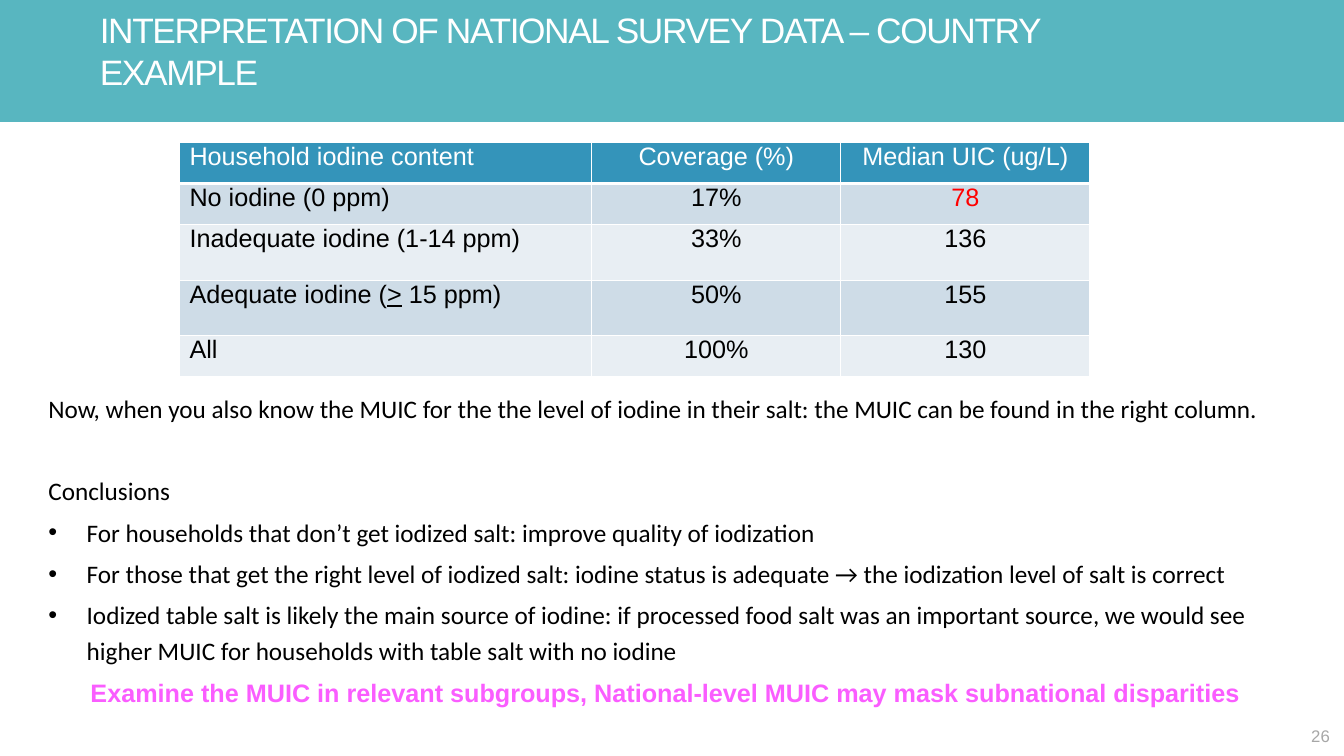
from dataclasses import dataclass

from lxml import etree
from pptx import Presentation
from pptx.dml.color import RGBColor
from pptx.enum.shapes import MSO_SHAPE
from pptx.enum.text import MSO_ANCHOR, MSO_AUTO_SIZE, PP_ALIGN
from pptx.oxml.ns import qn
from pptx.util import Inches, Pt

LEFT, CENTER, RIGHT = PP_ALIGN.LEFT, PP_ALIGN.CENTER, PP_ALIGN.RIGHT
TOP, MIDDLE, BOTTOM = MSO_ANCHOR.TOP, MSO_ANCHOR.MIDDLE, MSO_ANCHOR.BOTTOM
NO_AUTOFIT = MSO_AUTO_SIZE.NONE
RECTANGLE = MSO_SHAPE.RECTANGLE

COLORS = {
    "band": "58B6C0",
    "header": "3494BA",
    "row_dark": "CEDCE7",
    "row_light": "E8EEF3",
    "white": "FFFFFF",
    "black": "000000",
    "alert": "FF0000",
    "highlight": "FA5DFF",
    "page": "A7A7A7",
}


@dataclass
class SurveyRow:
    content: str
    coverage: str
    median_uic: str
    height: float = 0.41
    fill: str = "row_dark"
    color: str = "black"
    uic_color: str = "black"


@dataclass
class Remark:
    text: str
    bullet: bool = False
    space_before: float = 3.6
    align: PP_ALIGN = LEFT
    font: str = "Calibri"
    color: str = "black"
    bold: bool = False


SURVEY_ROWS = [
    SurveyRow("Household iodine content", "Coverage (%)", "Median UIC (ug/L)",
              fill="header", color="white", uic_color="white"),
    SurveyRow("No iodine (0 ppm)", "17%", "78", uic_color="alert"),
    SurveyRow("Inadequate iodine (1-14 ppm)", "33%", "136", height=0.55, fill="row_light"),
    SurveyRow("Adequate iodine (> 15 ppm)", "50%", "155", height=0.55),
    SurveyRow("All", "100%", "130", fill="row_light"),
]
COLUMN_WIDTHS = [4.09, 2.47, 2.47]

REMARKS = [
    Remark("Now, when you also know the MUIC for the the level of iodine in their salt: "
           "the MUIC can be found in the right column.", space_before=0),
    Remark("Conclusions", space_before=33),
    Remark("For households that don’t get iodized salt: improve quality of iodization",
           bullet=True),
    Remark("For those that get the right level of iodized salt: iodine status is adequate "
           "→ the iodization level of salt is correct", bullet=True),
    Remark("Iodized table salt is likely the main source of iodine: if processed food salt "
           "was an important source, we would see higher MUIC for households with table salt "
           "with no iodine", bullet=True),
    Remark("Examine the MUIC in relevant subgroups, National-level MUIC may mask subnational "
           "disparities", align=CENTER, font="Arial", color="highlight", bold=True),
]


def rgb(name: str) -> RGBColor:
    return RGBColor.from_string(COLORS[name])


def add_text(paragraph, text: str, *, size: float = 18, font: str = "Arial",
             color: str = "black", bold: bool = False, underline: bool = False,
             align: PP_ALIGN = LEFT, tracking: int = 0) -> None:
    """Append a formatted run; tracking is in hundredths of a point."""
    paragraph.alignment = align
    run = paragraph.add_run()
    run.text = text
    run.font.size = Pt(size)
    run.font.name = font
    run.font.bold = bold
    run.font.underline = underline
    run.font.color.rgb = rgb(color)
    if tracking:
        run.font._element.set("spc", str(tracking))


def place(shape, left: float, top: float, width: float, height: float) -> None:
    shape.left, shape.top = Inches(left), Inches(top)
    shape.width, shape.height = Inches(width), Inches(height)


def set_frame(frame, anchor: MSO_ANCHOR, side: float, end: float, wrap: bool = True) -> None:
    frame.auto_size = NO_AUTOFIT
    frame.word_wrap = wrap
    frame.vertical_anchor = anchor
    frame.margin_left = frame.margin_right = Inches(side)
    frame.margin_top = frame.margin_bottom = Inches(end)


def set_bullet(paragraph, bullet: bool) -> None:
    properties = paragraph._p.get_or_add_pPr()
    indent = Inches(0.38) if bullet else 0
    properties.set("marL", str(indent))
    properties.set("indent", str(-indent))
    if bullet:
        etree.SubElement(properties, qn("a:buFont")).set("typeface", "Arial")
        etree.SubElement(properties, qn("a:buChar")).set("char", "•")
    else:
        etree.SubElement(properties, qn("a:buNone"))


def set_borders(cell, bottom_width: float) -> None:
    """Insert white borders ahead of the cell fill, as the schema requires."""
    properties = cell._tc.get_or_add_tcPr()
    widths = {"a:lnL": 1, "a:lnR": 1, "a:lnT": 1, "a:lnB": bottom_width}
    for position, (tag, width) in enumerate(widths.items()):
        border = etree.Element(qn(tag), w=str(Pt(width)))
        solid = etree.SubElement(border, qn("a:solidFill"))
        etree.SubElement(solid, qn("a:srgbClr")).set("val", COLORS["white"])
        properties.insert(position, border)


def add_band(slide) -> None:
    """Draw the title band and send it behind the placeholders."""
    band = slide.shapes.add_shape(RECTANGLE, 0, 0, Inches(13.34), Inches(1.21))
    band.shadow.inherit = False
    band.fill.solid()
    band.fill.fore_color.rgb = rgb("band")
    band.line.fill.background()
    slide.shapes._spTree.insert(2, band._element)


def add_survey_table(slide) -> None:
    table = slide.shapes.add_table(
        len(SURVEY_ROWS), len(COLUMN_WIDTHS), Inches(1.78), Inches(1.41),
        Inches(sum(COLUMN_WIDTHS)), Inches(sum(row.height for row in SURVEY_ROWS))).table
    table.first_row = table.horz_banding = False
    for column, width in zip(table.columns, COLUMN_WIDTHS):
        column.width = Inches(width)
    for row_index, row in enumerate(SURVEY_ROWS):
        table.rows[row_index].height = Inches(row.height)
        entries = [(row.content, LEFT, row.color), (row.coverage, CENTER, row.color),
                   (row.median_uic, CENTER, row.uic_color)]
        for column_index, (text, align, color) in enumerate(entries):
            cell = table.cell(row_index, column_index)
            cell.fill.solid()
            cell.fill.fore_color.rgb = rgb(row.fill)
            set_borders(cell, bottom_width=3 if row_index == 0 else 1)
            paragraph = cell.text_frame.paragraphs[0]
            paragraph.line_spacing = 0.8
            before, sign, after = text.partition(">")
            for part in filter(None, (before, sign, after)):
                add_text(paragraph, part, color=color, align=align, underline=part == ">")


def fill_remarks(body) -> None:
    place(body, 0.38, 3.79, 12.44, 3.36)
    frame = body.text_frame
    set_frame(frame, TOP, 0.1, 0.05)
    for index, remark in enumerate(REMARKS):
        paragraph = frame.add_paragraph() if index else frame.paragraphs[0]
        set_bullet(paragraph, remark.bullet)
        paragraph.line_spacing = 1.2
        paragraph.space_before = Pt(remark.space_before)
        add_text(paragraph, remark.text, font=remark.font, color=remark.color,
                 bold=remark.bold, align=remark.align)


def main() -> None:
    deck = Presentation()
    deck.slide_width, deck.slide_height = Inches(13.33), Inches(7.5)
    slide = deck.slides.add_slide(deck.slide_layouts[1])
    add_band(slide)

    title = slide.shapes.title
    place(title, 0.99, 0.22, 10.41, 0.7)
    set_frame(title.text_frame, BOTTOM, 0, 0)
    add_text(title.text_frame.paragraphs[0],
             "INTERPRETATION OF NATIONAL SURVEY DATA – COUNTRY EXAMPLE",
             size=25.2, color="white", tracking=-100)

    add_survey_table(slide)
    fill_remarks(slide.placeholders[1])

    page_number = slide.shapes.add_textbox(Inches(12.95), Inches(7.15), Inches(0.29), Inches(0.3))
    set_frame(page_number.text_frame, MIDDLE, 0.05, 0.05, wrap=False)
    add_text(page_number.text_frame.paragraphs[0], "26", size=12, color="page", align=RIGHT)

    deck.save("out.pptx")


if __name__ == "__main__":
    main()
